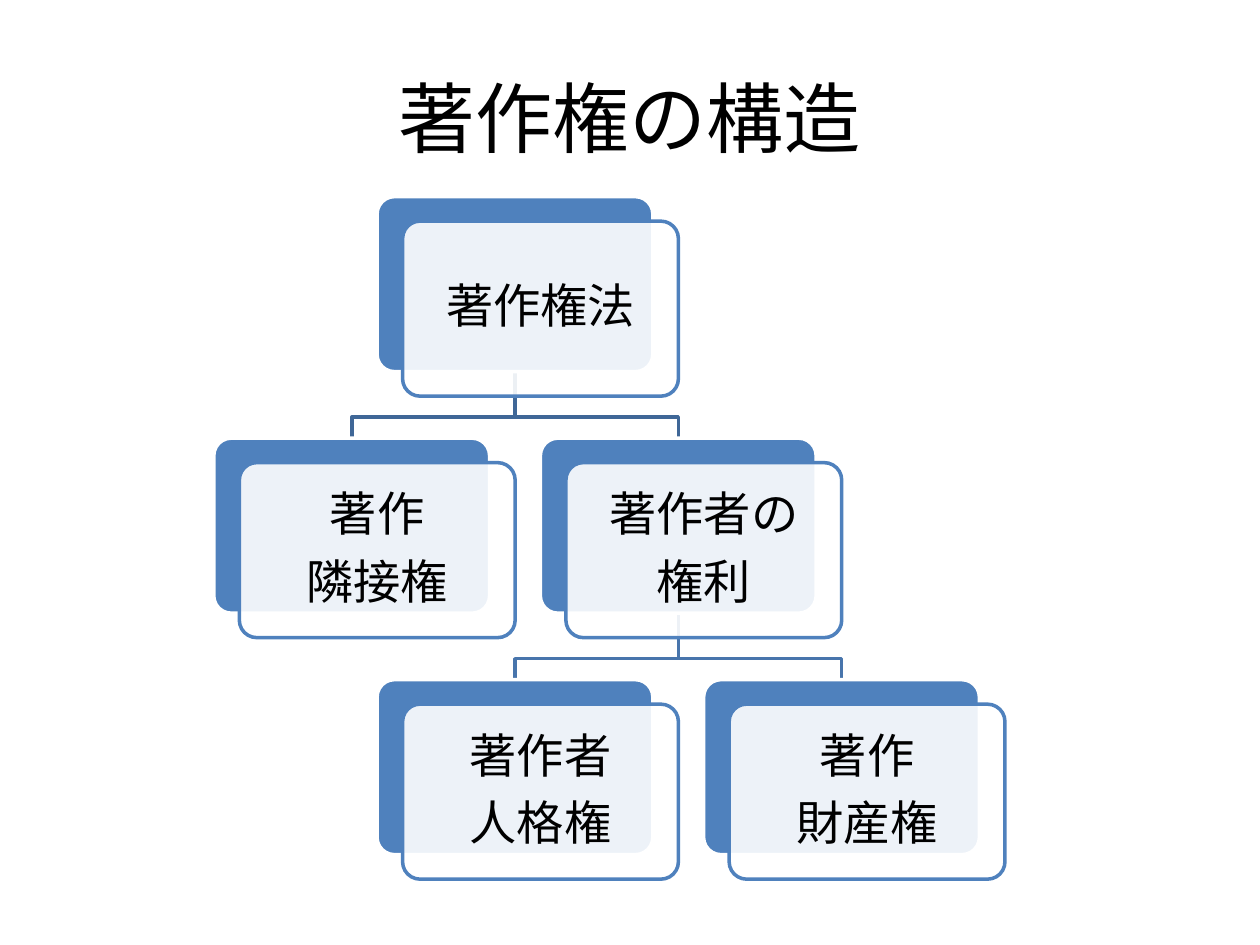
from collections import namedtuple
from dataclasses import dataclass

from lxml.etree import SubElement
from pptx import Presentation
from pptx.dml.color import RGBColor
from pptx.enum.shapes import MSO_SHAPE
from pptx.enum.text import MSO_ANCHOR, PP_ALIGN
from pptx.oxml.ns import qn
from pptx.util import Pt

Box = namedtuple("Box", "left top width height")


@dataclass(frozen=True)
class Theme:
    font: str = "Calibri"
    title_size: float = 44
    card_size: float = 27
    line_width: float = 2
    ink: RGBColor = RGBColor(0x00, 0x00, 0x00)
    white: RGBColor = RGBColor(0xFF, 0xFF, 0xFF)
    accent: RGBColor = RGBColor(0x4F, 0x81, 0xBD)
    link_colors: tuple = (RGBColor(0x3F, 0x67, 0x97), RGBColor(0x48, 0x75, 0xAC))


THEME = Theme()
PANEL_OPACITY = 90
PANEL_SHIFT = (14.6, 14)
CARD_WIDTH, CARD_HEIGHT = 157.6, 100
COLUMN_STEP, ROW_STEP = 93.3, 138
BEND_DROP = 26

# key: (lines, column, row, parent)
RIGHTS = {
    "law": (("著作権法",), 1, 0, None),
    "neighbouring": (("著作", "隣接権"), 0, 1, "law"),
    "author": (("著作者の", "権利"), 2, 1, "law"),
    "moral": (("著作者", "人格権"), 1, 2, "author"),
    "property": (("著作", "財産権"), 3, 2, "author"),
}


def write_text(frame, lines, size, color=THEME.ink, inset=None,
               line_spacing=None, space_after=None):
    frame.word_wrap = True
    frame.vertical_anchor = MSO_ANCHOR.MIDDLE
    if inset is not None:
        frame.margin_left = frame.margin_right = Pt(inset)
        frame.margin_top = frame.margin_bottom = Pt(inset)
    for index, line in enumerate(lines):
        paragraph = frame.add_paragraph() if index else frame.paragraphs[0]
        paragraph.alignment = PP_ALIGN.CENTER
        if line_spacing is not None:
            paragraph.line_spacing = line_spacing
        if space_after is not None:
            paragraph.space_after = Pt(space_after)
        run = paragraph.add_run()
        run.text = line
        run.font.name = THEME.font
        run.font.size = Pt(size)
        run.font.color.rgb = color


def set_opacity(shape, percent):
    color = shape.fill._xPr.find(qn("a:solidFill"))[0]
    SubElement(color, qn("a:alpha")).set("val", str(percent * 1000))


def add_rounded(slide, box, fill, line):
    shape = slide.shapes.add_shape(MSO_SHAPE.ROUNDED_RECTANGLE, *map(Pt, box))
    shape.adjustments[0] = 0.1
    shape.shadow.inherit = False
    shape.fill.solid()
    shape.fill.fore_color.rgb = fill
    shape.line.color.rgb = line
    shape.line.width = Pt(THEME.line_width)
    return shape


def add_title(slide, box, text):
    title = slide.shapes.title
    title.left, title.top, title.width, title.height = map(Pt, box)
    write_text(title.text_frame, [text], THEME.title_size)


def add_card(slide, box, lines):
    """Solid card with a translucent panel, shifted down and right, for the text."""
    add_rounded(slide, box, THEME.accent, THEME.white)
    shift_x, shift_y = PANEL_SHIFT
    panel_box = box._replace(left=box.left + shift_x, top=box.top + shift_y)
    panel = add_rounded(slide, panel_box, THEME.white, THEME.accent)
    set_opacity(panel, PANEL_OPACITY)
    write_text(panel.text_frame, lines, THEME.card_size, inset=8,
               line_spacing=0.9, space_after=9.45)


def add_link(slide, parent, child, color):
    """Bent line from the parent's bottom centre to the child's top centre."""
    start_x = parent.left + parent.width / 2
    start_y = parent.top + parent.height
    end_x = child.left + child.width / 2
    bend_y = start_y + BEND_DROP
    builder = slide.shapes.build_freeform(Pt(start_x), Pt(start_y))
    corners = [(start_x, bend_y), (end_x, bend_y), (end_x, child.top)]
    builder.add_line_segments([(Pt(x), Pt(y)) for x, y in corners], close=False)
    link = builder.convert_to_shape()
    link.shadow.inherit = False
    link.fill.background()
    link.line.color.rgb = color
    link.line.width = Pt(THEME.line_width)


def add_tree(slide, left, top, rights):
    boxes = {
        key: Box(left + column * COLUMN_STEP, top + row * ROW_STEP,
                 CARD_WIDTH, CARD_HEIGHT)
        for key, (_, column, row, _) in rights.items()
    }
    for key, (_, _, row, parent) in rights.items():
        if parent:
            add_link(slide, boxes[parent], boxes[key], THEME.link_colors[row - 1])
    for key, (lines, *_) in rights.items():
        add_card(slide, boxes[key], lines)


def main():
    presentation = Presentation()
    presentation.slide_width, presentation.slide_height = Pt(720), Pt(540)
    slide = presentation.slides.add_slide(presentation.slide_layouts[5])
    add_title(slide, Box(36, 21.6, 648, 90), "著作権の構造")
    add_tree(slide, 122.2, 112.4, RIGHTS)
    presentation.save("out.pptx")


if __name__ == "__main__":
    main()
